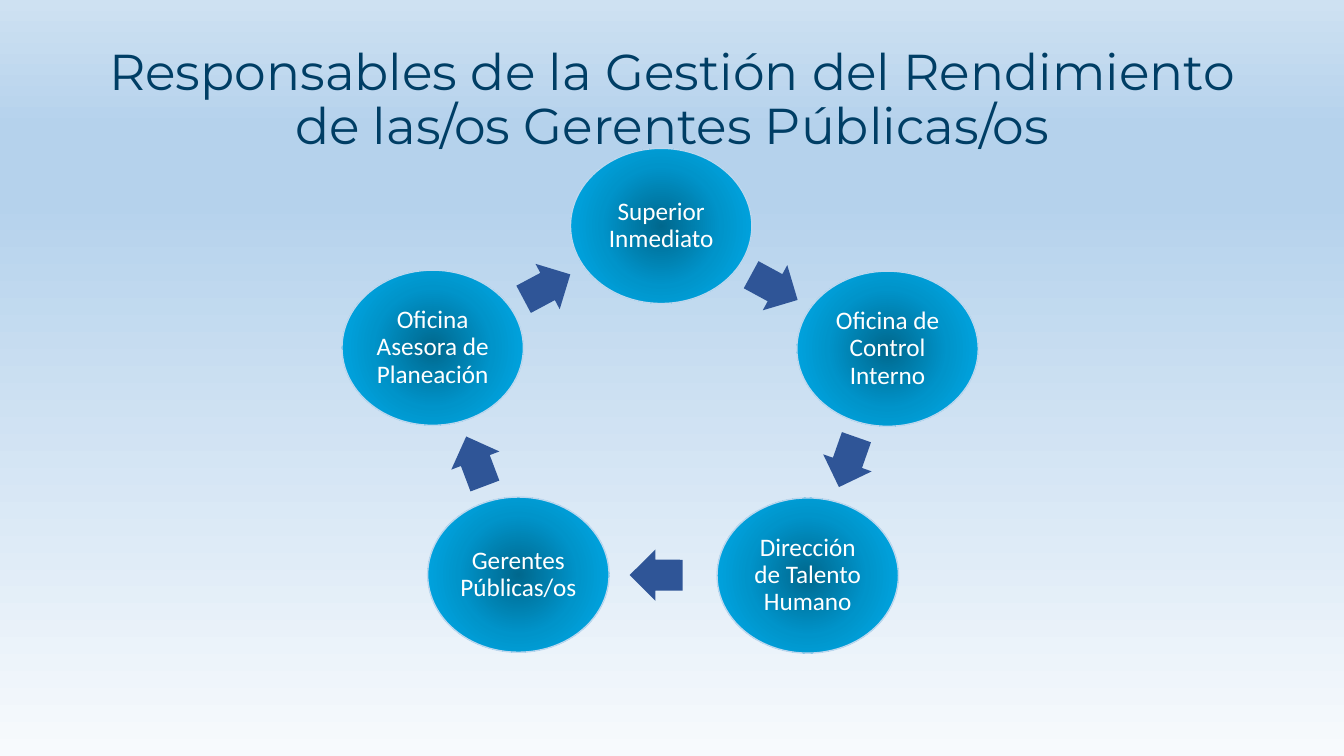
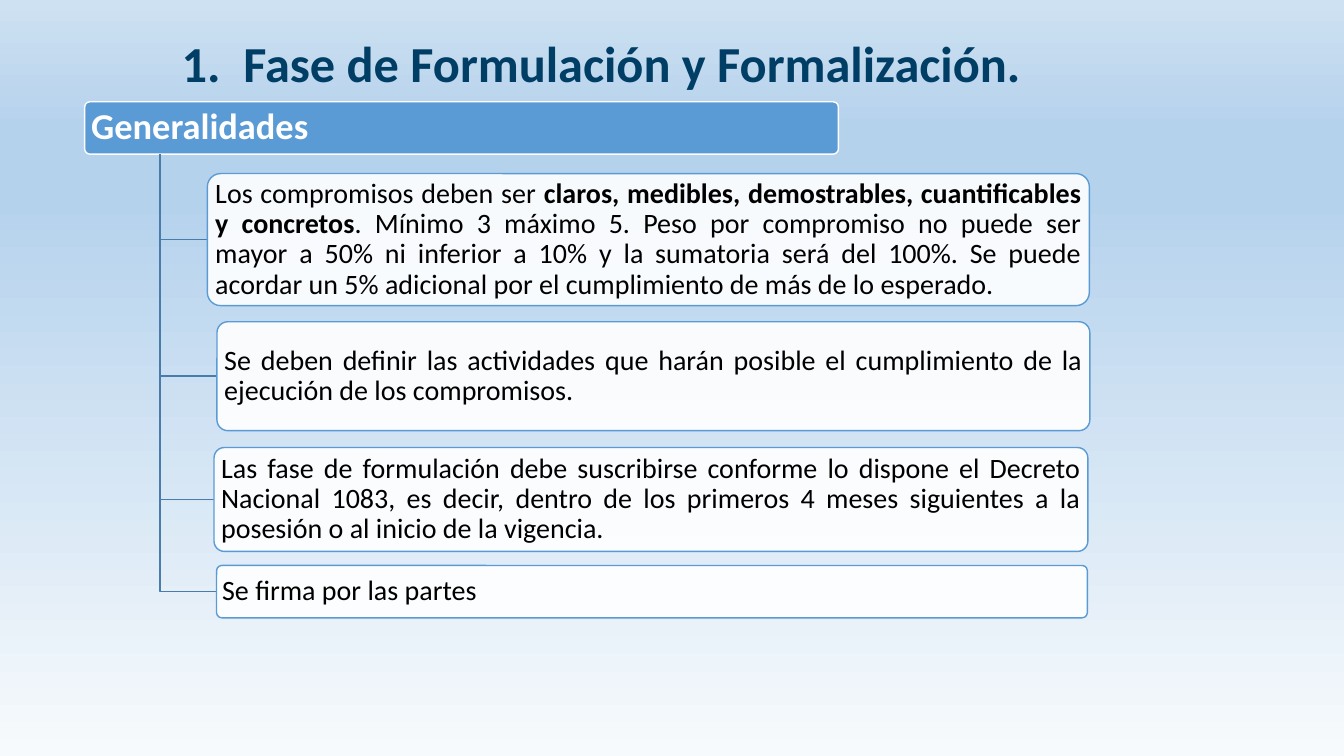
from math import atan2, cos, degrees, sin

from lxml.etree import SubElement
from pptx import Presentation
from pptx.dml.color import RGBColor
from pptx.enum.shapes import MSO_SHAPE
from pptx.enum.text import MSO_ANCHOR, PP_ALIGN
from pptx.oxml import parse_xml
from pptx.oxml.ns import nsdecls, qn
from pptx.util import Pt

NAVY, WHITE, BLACK = "003E65", "FFFFFF", "000000"
BLUE, STEEL, ARROW, RIM = "5B9BD5", "497CAB", "2F5597", "BDD7EE"
SKY = [(0, "F7FAFD"), (74, "B5D2EC"), (83, "B5D2EC"), (100, "CEE1F2")]
GLOW = [(0, "00688E"), (50, "0094CA"), (100, "00B0F0")]
UPWARD = '<a:lin ang="16200000" scaled="0"/>'
RADIAL = ('<a:path path="circle"><a:fillToRect l="50000" t="50000" '
          'r="50000" b="50000"/></a:path>')

ROLES = [
    ("Superior Inmediato", 227.5, 55.4, 0),
    ("Oficina de Control Interno", 389.2, 143.1, 0),
    ("Dirección de Talento Humano", 332.2, 305.1, 5),
    ("Gerentes Públicas/os", 125.5, 304.5, 0),
    ("Oficina Asesora de Planeación", 64.3, 142.4, 0),
]
RULES = [
    (87.6, 51.3, 630, 94.3,
     "Los compromisos deben ser **claros, medibles, demostrables, "
     "cuantificables y concretos**. Mínimo 3 máximo 5. Peso por compromiso "
     "no puede ser mayor a 50% ni inferior a 10% y la sumatoria será del "
     "100%. Se puede acordar un 5% adicional por el cumplimiento de más de "
     "lo esperado."),
    (94.5, 157.1, 623.5, 77.8,
     "Se deben definir las actividades que harán posible el cumplimiento de "
     "la ejecución de los compromisos."),
    (92.4, 247, 624.2, 74.2,
     "Las fase de formulación debe suscribirse conforme lo dispone el "
     "Decreto Nacional 1083, es decir, dentro de los primeros 4 meses "
     "siguientes a la posesión o al inicio de la vigencia."),
    (94.2, 331.2, 622, 37.4, "Se firma por las partes"),
]


def paint(target, color):
    """Give a solid fill, a line or a font its colour."""
    if hasattr(target, "solid"):
        target.solid()
        target = target.fore_color
    else:
        target = target.color
    target.rgb = RGBColor.from_string(color)


def blend(owner, fill, stops, course):
    """Fill an owner with a gradient of any number of stops."""
    fill.gradient()
    old = next(owner.element.iter(qn("a:gradFill")))
    marks = "".join(f'<a:gs pos="{pos * 1000}"><a:srgbClr val="{color}"/></a:gs>'
                    for pos, color in stops)
    new = parse_xml(f'<a:gradFill {nsdecls("a")} rotWithShape="1">'
                    f'<a:gsLst>{marks}</a:gsLst>{course}</a:gradFill>')
    old.getparent().replace(old, new)


def write(shape, text, size, color, align, pad, face="Calibri", bold=None):
    """Set one paragraph, with bold parts between double asterisks."""
    frame = shape.text_frame
    frame.word_wrap = True
    frame.vertical_anchor = MSO_ANCHOR.MIDDLE
    frame.margin_left = frame.margin_right = Pt(pad[0])
    frame.margin_top = frame.margin_bottom = Pt(pad[1])
    para = frame.paragraphs[0]
    para.alignment = align
    para.line_spacing = 0.9
    font = para.font
    font.name, font.size, font.bold = face, Pt(size), bold
    paint(font, color)
    for place, part in enumerate(text.split("**")):
        run = para.add_run()
        run.text = part
        if place % 2:
            run.font.bold = True


def draw(slide, kind, box, line=None):
    """Add a flat preset shape with an optional one-point outline."""
    shape = slide.shapes.add_shape(kind, *map(Pt, box))
    shape.shadow.inherit = False
    if line:
        paint(shape.line, line)
        shape.line.width = Pt(1)
    else:
        shape.line.fill.background()
    return shape


def title(slide, text, box, face, bold):
    """Place a centred slide title."""
    shape = slide.shapes.add_textbox(*map(Pt, box))
    write(shape, text, 36, NAVY, PP_ALIGN.CENTER, (7.2, 3.6), face, bold)


def cycle(slide, left, top, roles):
    """Draw a ring of ovals, with an arrow from each to the next."""
    wide, high = 129.6, 110.9
    span, depth = 37.8, 36.7
    for (name, x, y, slip), (_, nextx, nexty, _) in zip(roles, roles[1:] + roles[:1]):
        oval = draw(slide, MSO_SHAPE.OVAL,
                    (left + x - wide / 2, top + y - high / 2, wide, high), RIM)
        blend(oval, oval.fill, GLOW, RADIAL)
        write(oval, name, 18, WHITE, PP_ALIGN.CENTER, (2, 2))
        turn = atan2(nexty - y, nextx - x)
        midx = left + (x + nextx) / 2 + slip * cos(turn)
        midy = top + (y + nexty) / 2 + slip * sin(turn)
        arrow = draw(slide, MSO_SHAPE.RIGHT_ARROW,
                     (midx - span / 2, midy - depth / 2, span, depth))
        arrow.adjustments[0], arrow.adjustments[1] = 0.6, 0.5
        arrow.rotation = degrees(turn) % 360
        paint(arrow.fill, ARROW)


def panel(slide, box, fill, line):
    """Draw a slightly rounded box."""
    shape = draw(slide, MSO_SHAPE.ROUNDED_RECTANGLE, box, line)
    shape.adjustments[0] = 0.1
    paint(shape.fill, fill)
    return shape


def elbow(slide, x, y, endx, endy):
    """Draw an open line that goes down and then right."""
    x, y, endx, endy = map(Pt, (x, y, endx, endy))
    pen = slide.shapes.build_freeform(x, y)
    pen.add_line_segments([(x, endy), (endx, endy)], close=False)
    line = pen.convert_to_shape()
    line.shadow.inherit = False
    line.fill.background()
    paint(line.line, STEEL)
    line.line.width = Pt(1)


def tree(slide, left, top, head, rules):
    """Draw a heading with the rules that branch from its trunk."""
    wide, high = 538.4, 37.4
    bar = panel(slide, (left, top, wide, high), BLUE, WHITE)
    write(bar, head, 26, WHITE, PP_ALIGN.JUSTIFY, (3.6, 2.9), bold=True)
    for x, y, width, height, text in rules:
        elbow(slide, left + wide / 10, top + high, left + x, top + y + height / 2)
        card = panel(slide, (left + x, top + y, width, height), WHITE, BLUE)
        shade = next(card.element.spPr.iter(qn("a:srgbClr")))
        SubElement(shade, qn("a:alpha"), val="90000")
        write(card, text, 20, BLACK, PP_ALIGN.JUSTIFY, (2.9, 2.2))


def main():
    """Build and save the deck."""
    deck = Presentation()
    deck.slide_width, deck.slide_height = Pt(960), Pt(540)
    master = deck.slide_master
    blend(master, master.background.fill, SKY, UPWARD)
    blank = deck.slide_layouts[6]

    slide = deck.slides.add_slide(blank)
    title(slide, "Responsables de la Gestión del Rendimiento de las/os "
          "Gerentes Públicas/os", (66, 20, 828, 104.4), "Montserrat", None)
    cycle(slide, 244.8, 106, ROLES)

    slide = deck.slides.add_slide(blank)
    title(slide, "1.  Fase de Formulación y Formalización.",
          (64.6, 22.3, 730, 50.4), "Calibri", True)
    tree(slide, 60.5, 72.7, "Generalidades", RULES)
    deck.save("out.pptx")


if __name__ == "__main__":
    main()
